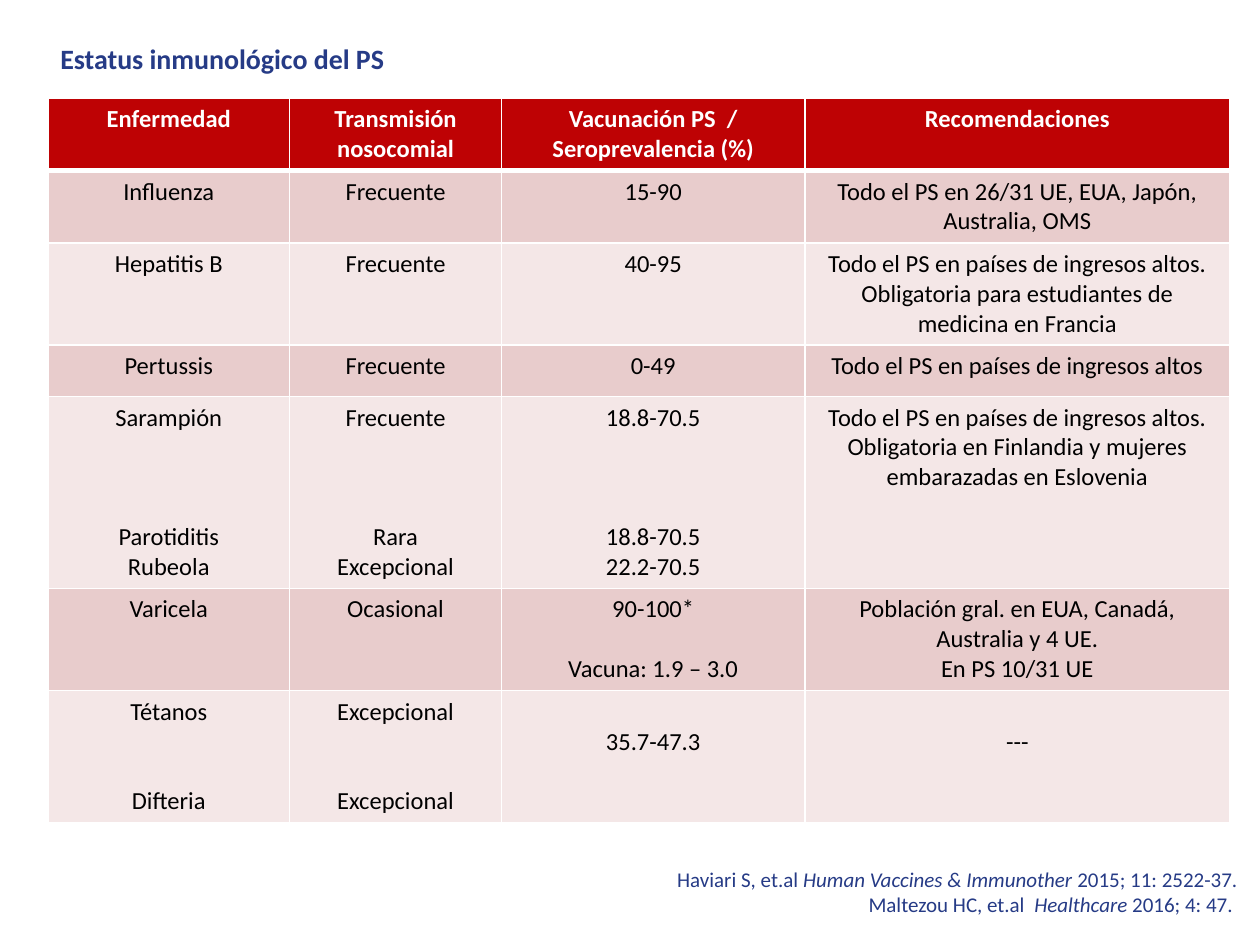
"""Build the slide on the immune status of health personnel (PS)."""
import pptx
import pptx.dml.color
import pptx.enum.text
import pptx.oxml
import pptx.oxml.ns
import pptx.util

Inches = pptx.util.Inches
Pt = pptx.util.Pt
ALIGN = pptx.enum.text.PP_ALIGN

COLORS = {"navy": "263B86", "header": "BE0204", "dark_band": "E8CCCC",
          "light_band": "F4E7E7", "white": "FFFFFF", "black": "000000"}

TITLE = [["Estatus inmunológico del PS"]]
HEADER = ["Enfermedad", "Transmisión nosocomial",
          "Vacunación PS  / Seroprevalencia (%)", "Recomendaciones"]
# Each cell is a text, or a list of (empty lines above, text).
DISEASES = [
    ["Influenza", "Frecuente", "15-90",
     "Todo el PS en 26/31 UE, EUA, Japón, Australia, OMS"],
    ["Hepatitis B", "Frecuente", "40-95",
     "Todo el PS en países de ingresos altos. Obligatoria para estudiantes de medicina en Francia"],
    ["Pertussis", "Frecuente", "0-49", "Todo el PS en países de ingresos altos"],
    [[(0, "Sarampión"), (3, "Parotiditis"), (0, "Rubeola")],
     [(0, "Frecuente"), (3, "Rara"), (0, "Excepcional")],
     [(0, "18.8-70.5"), (3, "18.8-70.5"), (0, "22.2-70.5")],
     "Todo el PS en países de ingresos altos. Obligatoria en Finlandia y mujeres embarazadas en Eslovenia"],
    ["Varicela", "Ocasional", [(0, "90-100*"), (1, "Vacuna: 1.9 – 3.0")],
     [(0, "Población gral. en EUA, Canadá, Australia y 4 UE."), (0, "En PS 10/31 UE")]],
    [[(0, "Tétanos"), (2, "Difteria")], [(0, "Excepcional"), (2, "Excepcional")],
     [(1, "35.7-47.3")], [(1, "---")]],
]
REFERENCES = [
    ["Haviari S, et.al ", ("Human Vaccines & Immunother ", {"italic": True}), "2015; 11: 2522-37."],
    ["Maltezou HC, et.al  ", ("Healthcare ", {"italic": True}), "2016; 4: 47. "],
]

COLUMN_WIDTHS = [1.92, 1.68, 2.41, 3.37]
ROW_HEIGHTS = [0.57, 0.57, 0.81, 0.41, 1.52, 0.81, 1.05]
LINE_PITCH = 17.09
CELL_MARGIN = 0.05


def rgb(name):
    return pptx.dml.color.RGBColor.from_string(COLORS[name])


def add_run(paragraph, text, color, **formats):
    run = paragraph.add_run()
    run.text = text
    run.font.color.rgb = rgb(color)
    for name, value in {"name": "Calibri", **formats}.items():
        setattr(run.font, name, value)


def add_text(slide, box, lines, alignment, **formats):
    frame = slide.shapes.add_textbox(*map(Inches, box)).text_frame
    frame.word_wrap = True
    for index, line in enumerate(lines):
        paragraph = frame.add_paragraph() if index else frame.paragraphs[0]
        paragraph.alignment = alignment
        for part in line:
            text, extra = (part, {}) if isinstance(part, str) else part
            add_run(paragraph, text, "navy", **{**formats, **extra})


def add_borders(cell, widths):
    properties = cell._tc.get_or_add_tcPr()
    for side, points in widths.items():
        properties.append(pptx.oxml.parse_xml(
            f'<a:{side} {pptx.oxml.ns.nsdecls("a")} w="{Pt(points)}"><a:solidFill>'
            f'<a:srgbClr val="{COLORS["white"]}"/></a:solidFill></a:{side}>'))


def fill_cell(cell, content, band, color, bold):
    cell.fill.solid()
    cell.fill.fore_color.rgb = rgb(band)
    entries = [(0, content)] if isinstance(content, str) else content
    cell.margin_top = Inches(CELL_MARGIN) + Pt(entries[0][0] * LINE_PITCH)
    for index, (gap, text) in enumerate(entries):
        paragraph = cell.text_frame.add_paragraph() if index else cell.text_frame.paragraphs[0]
        paragraph.alignment = ALIGN.CENTER
        if index and gap:
            paragraph.space_before = Pt(gap * LINE_PITCH)
        add_run(paragraph, text, color, size=Pt(14), bold=bold)


def add_disease_table(slide):
    rows = [HEADER] + DISEASES
    box = (0.38, 0.78, sum(COLUMN_WIDTHS), sum(ROW_HEIGHTS))
    table = slide.shapes.add_table(len(rows), len(HEADER), *map(Inches, box)).table
    for column, width in zip(table.columns, COLUMN_WIDTHS):
        column.width = Inches(width)
    for row, height in zip(table.rows, ROW_HEIGHTS):
        row.height = Inches(height)
    for r, contents in enumerate(rows):
        band = "header" if r == 0 else ("light_band", "dark_band")[r % 2]
        for c, content in enumerate(contents):
            cell = table.cell(r, c)
            add_borders(cell, {"lnL": 1, "lnR": 1, "lnT": 3 if r == 1 else 1,
                               "lnB": 3 if r == 0 else 1})
            fill_cell(cell, content, band, "black" if r else "white", r == 0)


def main():
    deck = pptx.Presentation()
    deck.slide_width, deck.slide_height = Inches(10), Inches(7.5)
    slide = deck.slides.add_slide(deck.slide_layouts[6])
    add_disease_table(slide)
    add_text(slide, (3.56, 6.83, 6.36, 0.5), REFERENCES, ALIGN.RIGHT, size=Pt(12))
    add_text(slide, (0.38, 0.28, 8.15, 0.37), TITLE, ALIGN.LEFT, size=Pt(16), bold=True)
    deck.save("out.pptx")


if __name__ == "__main__":
    main()
